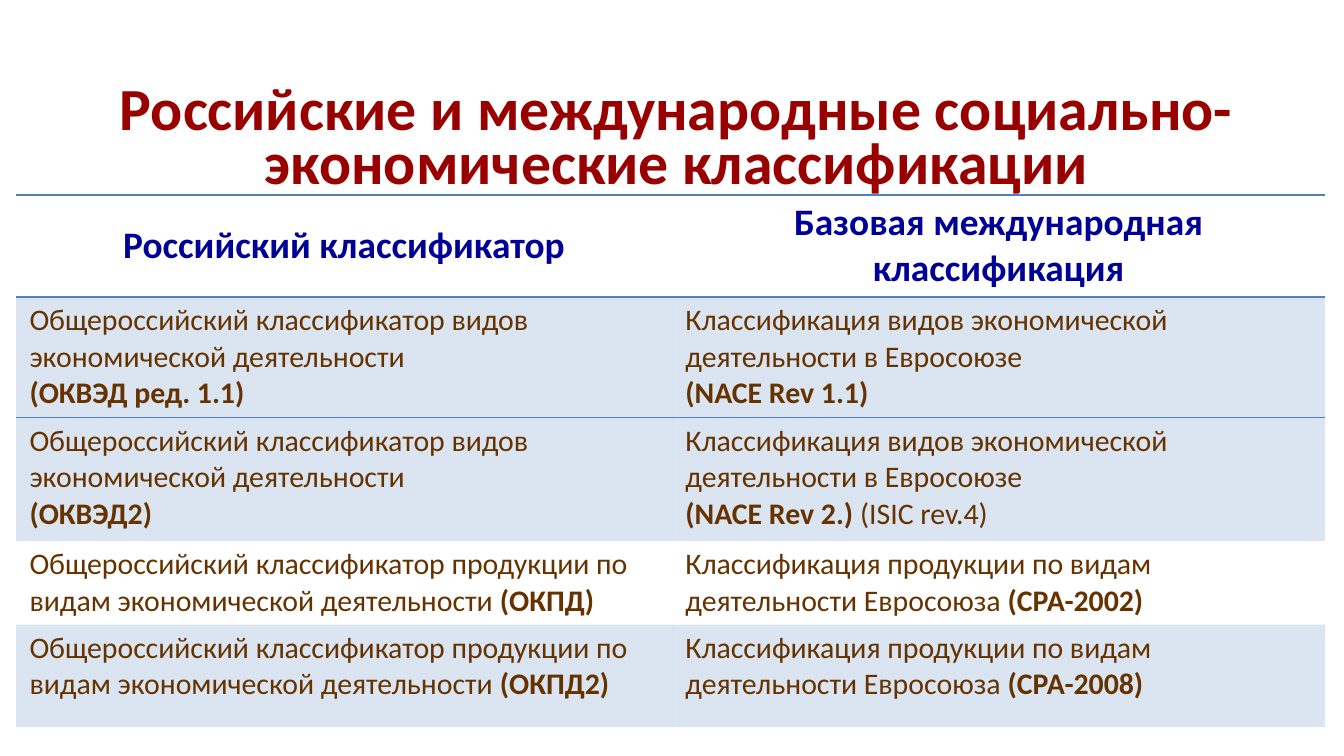
from lxml.etree import SubElement
from pptx import Presentation
from pptx.dml.color import RGBColor
from pptx.enum.text import MSO_ANCHOR as Anchor, PP_ALIGN as Align
from pptx.oxml import parse_xml
from pptx.oxml.ns import nsdecls, qn
from pptx.util import Inches, Pt

NO_STYLE = "{2D5ABB26-0587-4C30-8999-92F81FD0307C}"
COLUMNS = [4.88, 4.86]
ROWS = [0.74, 0.86, 0.92, 0.61, 0.76]
HEADERS = ["Российский классификатор", "Базовая международная классификация"]
ACTIVITY = "Общероссийский классификатор видов экономической деятельности "
EU_ACTIVITY = "Классификация видов экономической деятельности в Евросоюзе"
PRODUCT = "Общероссийский классификатор продукции по видам экономической деятельности "
EU_PRODUCT = "Классификация продукции по видам деятельности Евросоюза "


def color(code):
    return RGBColor.from_string(code)


def activity_row(code, *eu_spans):
    return [[[(ACTIVITY + "\n", False), (code, True)]],
            [[(EU_ACTIVITY, False)], eu_spans]]


def product_row(code, eu_code):
    return [[[(PRODUCT, False), (code, True)]],
            [[(EU_PRODUCT, False), (eu_code, True)]]]


class Slide:
    """Holds the style and the current page, and adds elements to it."""

    font = "Calibri"
    title_color, header_color, body_color, accent = "990000", "000099", "663300", "4F81BD"

    def __init__(self, page):
        self.page = page

    def add_spans(self, para, spans, size, code):
        for text, bold in spans:
            span = para.add_run()
            span.text = text.rstrip("\n")
            span.font.name = self.font
            span.font.size = Pt(size)
            span.font.bold = bold
            span.font.color.rgb = color(code)
            if text.endswith("\n"):
                para.add_line_break()

    def add_title(self, text, left, top, width, height):
        box = self.page.shapes.add_textbox(*map(Inches, (left, top, width, height)))
        frame = box.text_frame
        frame.word_wrap = True
        frame.vertical_anchor = Anchor.BOTTOM
        para = frame.paragraphs[0]
        para.alignment = Align.CENTER
        para.line_spacing = Pt(29)
        self.add_spans(para, [(text, True)], 32, self.title_color)

    def add_border(self, cell, side):
        cell._tc.get_or_add_tcPr().append(parse_xml(
            f'<a:{side} {nsdecls("a")} w="12700"><a:solidFill>'
            f'<a:srgbClr val="{self.accent}"/></a:solidFill></a:{side}>'))

    def tint(self, cell):
        cell.fill.solid()
        cell.fill.fore_color.rgb = color(self.accent)
        tone = cell._tc.tcPr.find(qn("a:solidFill")).find(qn("a:srgbClr"))
        SubElement(tone, qn("a:alpha"), val="20000")

    def fill_cell(self, cell, paragraphs, size, code, align):
        cell.margin_left = cell.margin_right = Inches(0.1)
        cell.margin_top = cell.margin_bottom = Inches(0.04)
        frame = cell.text_frame
        for index, spans in enumerate(paragraphs):
            para = frame.add_paragraph() if index else frame.paragraphs[0]
            para.alignment = align
            self.add_spans(para, spans, size, code)

    def add_table(self, headers, rows, left, top):
        table = self.page.shapes.add_table(
            len(ROWS), len(COLUMNS), Inches(left), Inches(top),
            Inches(sum(COLUMNS)), Inches(sum(ROWS))).table
        table.horz_banding = table.first_row = False
        table._tbl.tblPr.find(qn("a:tableStyleId")).text = NO_STYLE
        for column, width in zip(table.columns, COLUMNS):
            column.width = Inches(width)
        for row, height in zip(table.rows, ROWS):
            row.height = Inches(height)
        for index, text in enumerate(headers):
            cell = table.cell(0, index)
            self.fill_cell(cell, [[(text, True)]], 20, self.header_color, Align.CENTER)
            cell.vertical_anchor = Anchor.MIDDLE
            self.add_border(cell, "lnT")
            self.add_border(cell, "lnB")
            cell.fill.background()
        for number, (contents, tinted) in enumerate(rows, 1):
            for index, paragraphs in enumerate(contents):
                cell = table.cell(number, index)
                self.fill_cell(cell, paragraphs, 16, self.body_color, Align.LEFT)
                if number == 1:
                    self.add_border(cell, "lnT")
                if tinted:
                    self.tint(cell)
                else:
                    cell.fill.background()


def main():
    deck = Presentation()
    deck.slide_width, deck.slide_height = Inches(10), Inches(10 * 9 / 16)
    slide = Slide(deck.slides.add_slide(deck.slide_layouts[6]))
    rows = [
        (activity_row("(ОКВЭД ред. 1.1)", ("(NACE Rev 1.1)", True)), True),
        (activity_row("(ОКВЭД2)", ("(NACE Rev 2.)", True), (" (ISIC rev.4)", False)), True),
        (product_row("(ОКПД)", "(СРА-2002)"), False),
        (product_row("(ОКПД2)", "(СРА-2008)"), True),
    ]
    slide.add_table(HEADERS, rows, 0.12, 1.45)
    slide.add_title("Российские и международные социально-экономические классификации",
                    0.21, 0.69, 9.65, 0.82)
    deck.save("out.pptx")


if __name__ == "__main__":
    main()
